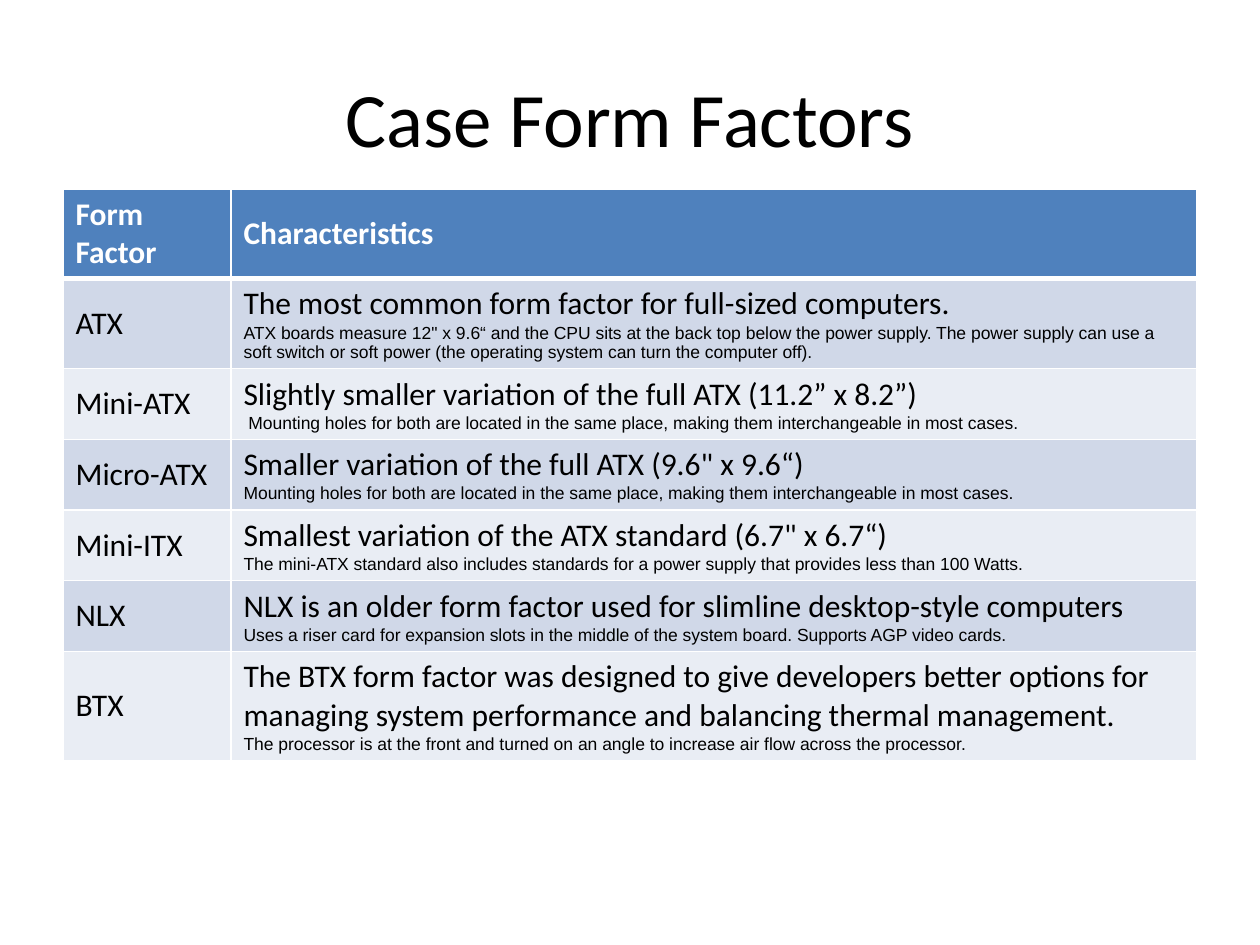
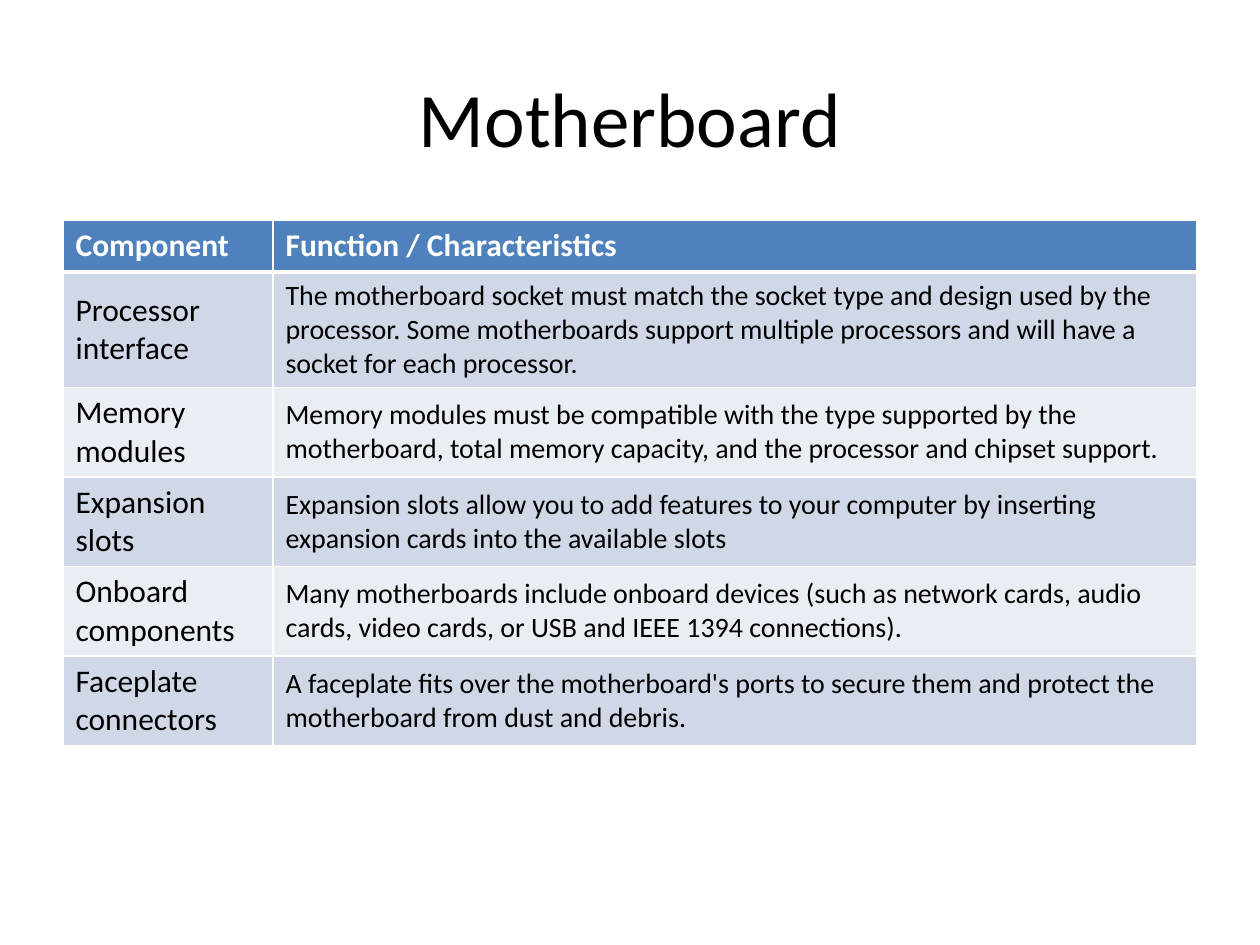
"""Build two slides of computer hardware tables: case form factors and motherboard parts."""
from dataclasses import dataclass

from lxml.etree import SubElement
from pptx import Presentation
from pptx.dml.color import RGBColor
from pptx.enum.text import MSO_ANCHOR, PP_ALIGN
from pptx.oxml.ns import qn
from pptx.util import Emu, Pt


@dataclass(frozen=True)
class Theme:
    font: str = "Calibri"
    note_font: str = "Arial"
    text: str = "000000"
    white: str = "FFFFFF"
    header: str = "4F81BD"
    bands: tuple = ("D0D8E8", "E9EDF4")
    title_size: int = 44
    label_size: int = 18
    body_size: int = 16
    note_size: int = 10
    rule: int = 1
    header_rule: int = 3


THEME = Theme()
LEFT, WIDTH, ROW_H = 63, 1134, 52
TITLE_TOP, TITLE_H = 38, 157

SLIDES = [
    dict(
        title="Case Form Factors", top=189, label_w=168, lead_size=THEME.label_size,
        header=("Form Factor", "Characteristics"),
        rows=[
            ("ATX", "The most common form factor for full-sized computers.",
             "ATX boards measure 12\" x 9.6“ and the CPU sits at the back top below the power supply. "
             "The power supply can use a soft switch or soft power "
             "(the operating system can turn the computer off)."),
            ("Mini-ATX", "Slightly smaller variation of the full ATX (11.2” x 8.2”)",
             " Mounting holes for both are located in the same place, "
             "making them interchangeable in most cases."),
            ("Micro-ATX", "Smaller variation of the full ATX (9.6\" x 9.6“)",
             "Mounting holes for both are located in the same place, "
             "making them interchangeable in most cases."),
            ("Mini-ITX", "Smallest variation of the ATX standard (6.7\" x 6.7“)",
             "The mini-ATX standard also includes standards for a power supply "
             "that provides less than 100 Watts."),
            ("NLX", "NLX is an older form factor used for slimline desktop-style computers",
             "Uses a riser card for expansion slots in the middle of the system board. "
             "Supports AGP video cards."),
            ("BTX", "The BTX form factor was designed to give developers better options "
             "for managing system performance and balancing thermal management.",
             "The processor is at the front and turned on an angle to increase air flow "
             "across the processor."),
        ],
    ),
    dict(
        title="Motherboard", top=220, label_w=210, lead_size=THEME.body_size,
        header=("Component", "Function / Characteristics"),
        rows=[
            ("Processor interface",
             "The motherboard socket must match the socket type and design used by the processor. "
             "Some motherboards support multiple processors and will have a socket for each processor."),
            ("Memory modules",
             "Memory modules must be compatible with the type supported by the motherboard, "
             "total memory capacity, and the processor and chipset support."),
            ("Expansion slots",
             "Expansion slots allow you to add features to your computer by inserting "
             "expansion cards into the available slots"),
            ("Onboard components",
             "Many motherboards include onboard devices (such as network cards, audio cards, "
             "video cards, or USB and IEEE 1394 connections)."),
            ("Faceplate connectors",
             "A faceplate fits over the motherboard's ports to secure them and protect "
             "the motherboard from dust and debris."),
        ],
    ),
]


def px(n):
    return Emu(round(n * 914400 / 126))


def add_run(p, text, size, color=THEME.text, font=THEME.font, bold=False):
    r = p.add_run()
    r.text = text
    r.font.size, r.font.name, r.font.bold = Pt(size), font, bold
    r.font.color.rgb = RGBColor.from_string(color)


def add_borders(cell, bottom):
    tc_pr = cell._tc.get_or_add_tcPr()
    for side, width in zip("LRTB", (THEME.rule,) * 3 + (bottom,)):
        ln = SubElement(tc_pr, qn(f"a:ln{side}"), w=str(Pt(width)))
        fill = SubElement(ln, qn("a:solidFill"))
        SubElement(fill, qn("a:srgbClr"), val=THEME.white)


def fill_cell(cell, fill, paragraphs, bottom=THEME.rule):
    add_borders(cell, bottom)
    cell.fill.solid()
    cell.fill.fore_color.rgb = RGBColor.from_string(fill)
    cell.vertical_anchor = MSO_ANCHOR.MIDDLE
    tf = cell.text_frame
    for i, (text, style) in enumerate(paragraphs):
        p = tf.add_paragraph() if i else tf.paragraphs[0]
        add_run(p, text, **style)


def add_title(s, text):
    sp = s.shapes.title
    sp.left, sp.top, sp.width, sp.height = px(LEFT), px(TITLE_TOP), px(WIDTH), px(TITLE_H)
    tf = sp.text_frame
    tf.vertical_anchor = MSO_ANCHOR.MIDDLE
    p = tf.paragraphs[0]
    p.alignment = PP_ALIGN.CENTER
    add_run(p, text, THEME.title_size)


def add_grid(s, top, label_w, lead_size, header, rows):
    n = len(rows) + 1
    table = s.shapes.add_table(n, 2, px(LEFT), px(top), px(WIDTH), px(ROW_H * n)).table
    for col, width in zip(table.columns, (label_w, WIDTH - label_w)):
        col.width = px(width)
    for row in table.rows:
        row.height = px(ROW_H)

    label = dict(size=THEME.label_size)
    heading = dict(label, color=THEME.white, bold=True)
    body = (dict(size=lead_size), dict(size=THEME.note_size, font=THEME.note_font))
    for c, text in enumerate(header):
        fill_cell(table.cell(0, c), THEME.header, [(text, heading)], THEME.header_rule)
    for i, (name, *texts) in enumerate(rows):
        band = THEME.bands[i % 2]
        fill_cell(table.cell(i + 1, 0), band, [(name, label)])
        fill_cell(table.cell(i + 1, 1), band, zip(texts, body))


def main():
    prs = Presentation()
    prs.slide_width, prs.slide_height = px(1260), px(945)
    for content in SLIDES:
        s = prs.slides.add_slide(prs.slide_layouts[5])
        add_title(s, content["title"])
        add_grid(s, **{k: v for k, v in content.items() if k != "title"})
    prs.save("out.pptx")


if __name__ == "__main__":
    main()
